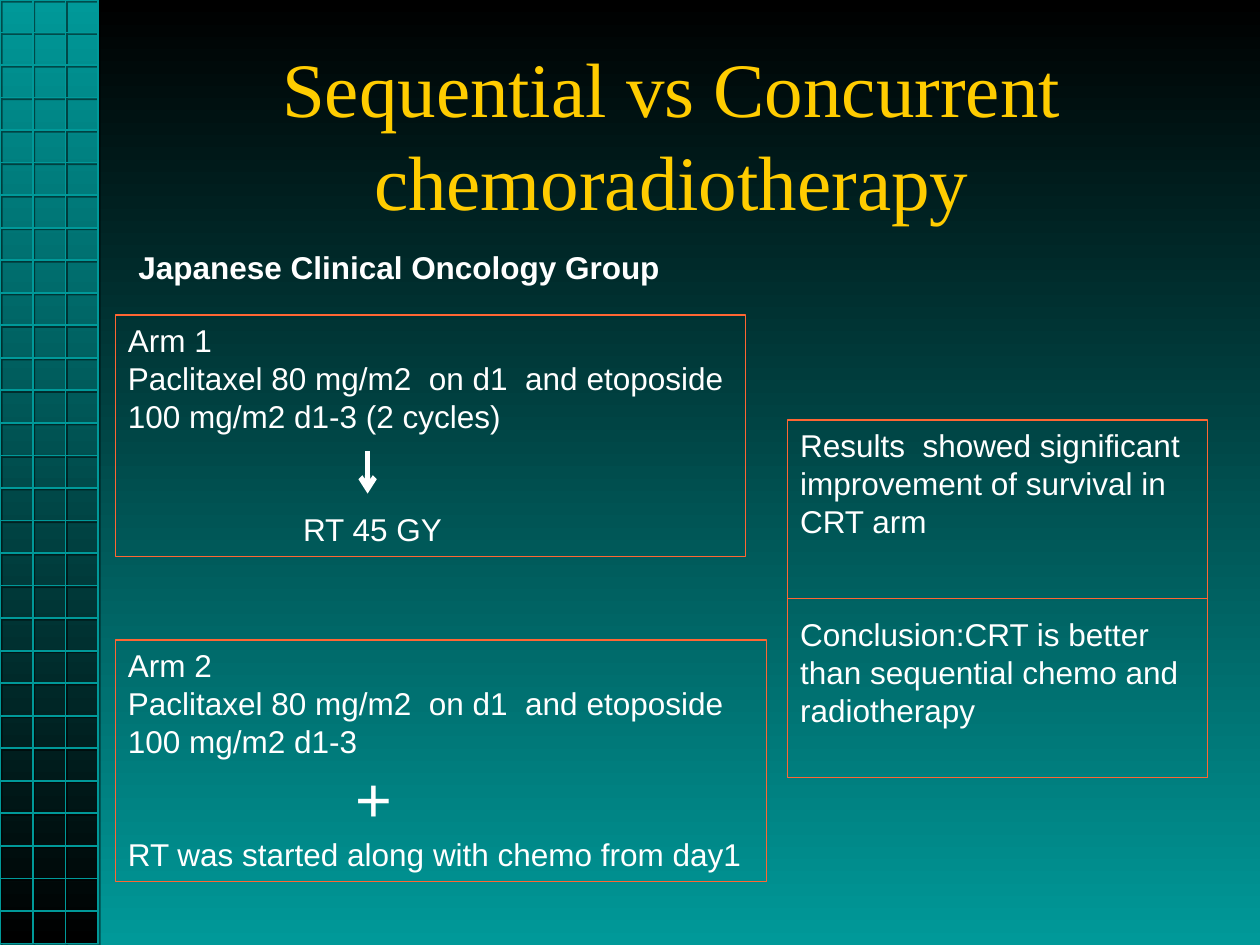
from dataclasses import dataclass

from lxml import etree
from pptx import Presentation
from pptx.dml.color import RGBColor
from pptx.enum.shapes import MSO_CONNECTOR, MSO_SHAPE
from pptx.enum.text import MSO_ANCHOR, MSO_AUTO_SIZE, PP_ALIGN
from pptx.oxml import parse_xml
from pptx.oxml.ns import nsdecls, qn
from pptx.util import Cm, Pt

RECTANGLE = MSO_SHAPE.RECTANGLE
STRAIGHT = MSO_CONNECTOR.STRAIGHT
CENTER = PP_ALIGN.CENTER
LEFT = PP_ALIGN.LEFT
TOP = MSO_ANCHOR.TOP
MIDDLE = MSO_ANCHOR.MIDDLE
GROW = MSO_AUTO_SIZE.SHAPE_TO_FIT_TEXT
FIXED = MSO_AUTO_SIZE.NONE
TITLE_ONLY = 5
LEFT_SIDE, RIGHT_SIDE = 1, 3


@dataclass(frozen=True)
class Theme:
    black: RGBColor = RGBColor(0, 0, 0)
    teal: RGBColor = RGBColor(0x00, 0x99, 0x99)
    gold: RGBColor = RGBColor(0xFF, 0xCC, 0x00)
    white: RGBColor = RGBColor(0xFF, 0xFF, 0xFF)
    orange: RGBColor = RGBColor(0xFF, 0x66, 0x33)
    title_font: str = "Times New Roman"
    body_font: str = "Arial"
    title_size: Pt = Pt(44)
    body_size: Pt = Pt(18)
    plus_size: Pt = Pt(36)
    border: Pt = Pt(0.75)


THEME = Theme()


@dataclass(frozen=True)
class Line:
    text: str
    before: float = 0
    indent: float = 0
    size: Pt = THEME.body_size


def fill_gradient(fill, first, last):
    fill.gradient()
    fill.gradient_angle = 270
    for stop, color, position in zip(fill.gradient_stops, (first, last), (0, 1)):
        stop.color.rgb = color
        stop.position = position


def style_font(font, name, size, color, bold=False):
    font.name = name
    font.size = size
    font.color.rgb = color
    font.bold = bold


def style_line(shape, color, width):
    shape.line.color.rgb = color
    shape.line.width = width


def add_grid_band(slide, left, top, width, height, columns=3, rows=29):
    band = slide.shapes.add_shape(RECTANGLE, left, top, width, height)
    band.shadow.inherit = False
    band.line.fill.background()
    fill_gradient(band.fill, THEME.teal, THEME.black)

    right, bottom = left + width, top + height
    points = []
    for column in range(columns + 1):
        x = left + width * column // columns
        ends = [(x, top), (x, bottom)]
        points += ends[::-1] if column % 2 else ends
    for row in range(rows + 1):
        y = top + height * row // rows
        ends = [(right, y), (left, y)]
        points += ends[::-1] if row % 2 else ends
    builder = slide.shapes.build_freeform(*points[0])
    builder.add_line_segments(points[1:], close=False)
    grid = builder.convert_to_shape()
    grid.fill.background()
    style_line(grid, THEME.teal, Pt(1))
    grid._element.spPr.append(parse_xml(
        f'<a:effectLst {nsdecls("a")}><a:outerShdw blurRad="0" dist="{Pt(1.4)}" '
        'dir="2700000"><a:srgbClr val="000000"><a:alpha val="50000"/>'
        '</a:srgbClr></a:outerShdw></a:effectLst>'))


def place_title(slide, left, top, width, height):
    title = slide.shapes.title
    title.left, title.top, title.width, title.height = left, top, width, height
    frame = title.text_frame
    frame.text = "Sequential vs Concurrent chemoradiotherapy"
    frame.auto_size = FIXED
    frame.vertical_anchor = MIDDLE
    paragraph = frame.paragraphs[0]
    paragraph.alignment = CENTER
    style_font(paragraph.runs[0].font, THEME.title_font, THEME.title_size, THEME.gold)


def add_subtitle(slide, left, top, width, height):
    frame = slide.shapes.add_textbox(left, top, width, height).text_frame
    frame.text = "Japanese Clinical Oncology Group"
    frame.word_wrap = False
    frame.auto_size = GROW
    font = frame.paragraphs[0].runs[0].font
    style_font(font, THEME.body_font, THEME.body_size, THEME.white, bold=True)


def add_panel(slide, left, top, width, height, lines):
    panel = slide.shapes.add_shape(RECTANGLE, left, top, width, height)
    panel.shadow.inherit = False
    panel.fill.background()
    style_line(panel, THEME.orange, THEME.border)
    frame = panel.text_frame
    frame.word_wrap = True
    frame.auto_size = GROW
    frame.vertical_anchor = TOP
    for index, line in enumerate(lines):
        paragraph = frame.add_paragraph() if index else frame.paragraphs[0]
        paragraph.text = line.text
        paragraph.alignment = LEFT
        if line.before:
            paragraph.space_before = Pt(line.before)
        if line.indent:
            paragraph._p.get_or_add_pPr().set("marL", str(Cm(line.indent)))
        style_font(paragraph.runs[0].font, THEME.body_font, line.size, THEME.white)
    return panel


def add_line(slide, start, end, color, width):
    line = slide.shapes.add_connector(STRAIGHT, *start, *end)
    style_line(line, color, width)
    etree.SubElement(line._element.spPr, qn("a:effectLst"))
    return line


def add_sequential_arm(slide, left, top, width, height):
    add_panel(slide, left, top, width, height, [
        Line("Arm 1"),
        Line("Paclitaxel 80 mg/m2  on d1  and etoposide 100 mg/m2 d1-3 (2 cycles)"),
        Line("RT 45 GY", before=43, indent=3.53),
    ])
    x = left + Cm(5.08)
    arrow = add_line(slide, (x, top + Cm(2.75)), (x, top + Cm(3.6)), THEME.white, Pt(3))
    etree.SubElement(arrow.line._get_or_add_ln(), qn("a:tailEnd"), type="arrow")


def add_concurrent_arm(slide, left, top, width, height):
    add_panel(slide, left, top, width, height, [
        Line("Arm 2"),
        Line("Paclitaxel 80 mg/m2  on d1  and etoposide 100 mg/m2 d1-3"),
        Line("+", indent=4.59, size=THEME.plus_size),
        Line("RT was started along with chemo from day1"),
    ])


def add_findings(slide, left, top, width, height):
    panel = add_panel(slide, left, top, width, height, [
        Line("Results  showed significant improvement of survival in CRT arm"),
        Line("Conclusion:CRT is better than sequential chemo and radiotherapy", before=43),
    ])
    middle = top + height // 2
    divider = add_line(slide, (left, middle), (left + width, middle),
                       THEME.orange, THEME.border)
    divider.begin_connect(panel, LEFT_SIDE)
    divider.end_connect(panel, RIGHT_SIDE)


def main():
    presentation = Presentation()
    presentation.slide_width, presentation.slide_height = Cm(25.4), Cm(19.05)
    slide = presentation.slides.add_slide(presentation.slide_layouts[TITLE_ONLY])
    fill_gradient(slide.background.fill, THEME.black, THEME.teal)
    add_grid_band(slide, Cm(0), Cm(0), Cm(1.98), Cm(19.02))
    place_title(slide, Cm(2.74), Cm(1.07), Cm(21.6), Cm(3.23))
    add_subtitle(slide, Cm(2.54), Cm(4.88), Cm(11.13), Cm(1.02))
    add_sequential_arm(slide, Cm(2.33), Cm(6.35), Cm(12.7), Cm(4.87))
    add_concurrent_arm(slide, Cm(2.33), Cm(12.9), Cm(13.13), Cm(4.87))
    add_findings(slide, Cm(15.88), Cm(8.47), Cm(8.46), Cm(7.2))
    presentation.save("out.pptx")


if __name__ == "__main__":
    main()
